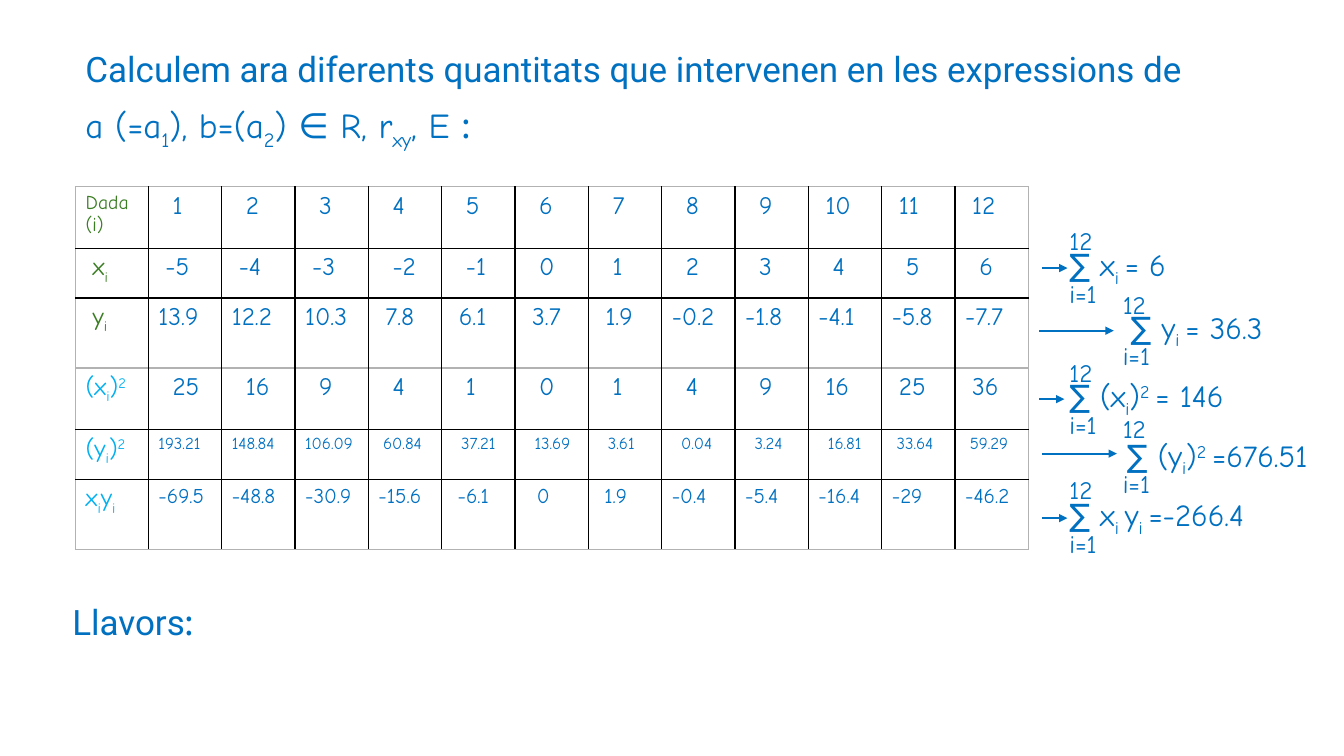
from lxml import etree
from pptx import Presentation
from pptx import util as u
from pptx.dml.color import RGBColor
from pptx.enum import shapes, text
from pptx.oxml import ns

COLORS = {"blue": "0070C0", "sky": "00B0F0", "green": "3B7D23", "grid": "000000", "frame": "B2B2B2"}
BASELINES = {"_": "-25000", "^": "30000"}
COLUMN_WIDTHS = [52] + [52.4] * 12
ROW_HEIGHTS = [44, 35.5, 50]
TABLE_LEFT, TABLE_TOP = 54, 133.3
SPACE_WIDTH = 0.28


def write_text(frame, content, size=18, font="Comic Neue", color="blue", line_spacing=None, space_before=None):
    for number, line in enumerate(content.split("\n")):
        paragraph = frame.paragraphs[0] if number == 0 else frame.add_paragraph()
        if line_spacing:
            paragraph.line_spacing = line_spacing
            paragraph.space_before = u.Pt(space_before)
        line_font = font
        if line.startswith("#"):
            line_font, line = "Roboto", line[1:]
        for part in line.split("|"):
            mark = part[0] if part[0] in "_^@" else ""
            run = paragraph.add_run()
            run.text = part[len(mark):]
            run.font.size = u.Pt(size)
            run.font.name = "Noto Sans CJK JP" if mark == "@" else line_font
            run.font.color.rgb = RGBColor.from_string(COLORS[color])
            if mark in BASELINES:
                run.font._element.set("baseline", BASELINES[mark])


class SlideBuilder:
    def __init__(self, slide):
        self.slide = slide

    def text_box(self, content, left, top, width, height, wrap=True, grow=False, **style):
        box = self.slide.shapes.add_textbox(u.Pt(left), u.Pt(top), u.Pt(width), u.Pt(height))
        frame = box.text_frame
        frame.word_wrap = wrap
        frame.auto_size = text.MSO_AUTO_SIZE.SHAPE_TO_FIT_TEXT if grow else text.MSO_AUTO_SIZE.NONE
        write_text(frame, content, **style)

    def arrow(self, left, y, length):
        line = self.slide.shapes.add_connector(
            shapes.MSO_CONNECTOR.STRAIGHT, u.Pt(left), u.Pt(y), u.Pt(left + length), u.Pt(y))
        line.line.color.rgb = RGBColor.from_string(COLORS["blue"])
        line.line.width = u.Pt(1.5)
        etree.SubElement(line.line._get_or_add_ln(), ns.qn("a:tailEnd"), type="triangle")
        etree.SubElement(line._element.spPr, ns.qn("a:effectLst"))

    def border(self, cell, edges):
        properties = cell._tc.get_or_add_tcPr()
        for index, (side, color) in enumerate(edges):
            line = etree.Element(ns.qn(f"a:ln{side}"), w=str(u.Pt(1)))
            fill = etree.SubElement(line, ns.qn("a:solidFill"))
            etree.SubElement(fill, ns.qn("a:srgbClr"), val=COLORS[color])
            properties.insert(index, line)

    def table(self, top, rows, label_color):
        graphic = self.slide.shapes.add_table(
            len(ROW_HEIGHTS), len(COLUMN_WIDTHS), u.Pt(TABLE_LEFT), u.Pt(top),
            u.Pt(sum(COLUMN_WIDTHS)), u.Pt(sum(ROW_HEIGHTS)))
        grid = graphic.table
        grid.first_row = grid.horz_banding = False
        for column, width in zip(grid.columns, COLUMN_WIDTHS):
            column.width = u.Pt(width)
        last_row, last_column = len(ROW_HEIGHTS) - 1, len(COLUMN_WIDTHS) - 1
        for r, (label, label_size, values, size, indents) in enumerate(rows):
            grid.rows[r].height = u.Pt(ROW_HEIGHTS[r])
            for c, content in enumerate([label] + values.split()):
                cell = grid.cell(r, c)
                cell.fill.background()
                self.border(cell, [
                    ("L", "frame" if c == 0 else "grid"),
                    ("R", "frame" if c == last_column else "grid"),
                    ("T", "frame" if r == 0 else "grid"),
                    ("B", "frame" if r == last_row else "grid")])
                text_size = size if c else label_size
                cell.margin_left = u.Pt(round(7.2 + int(indents[c]) * SPACE_WIDTH * text_size, 2))
                cell.margin_right = u.Pt(0)
                write_text(cell.text_frame, content, size=text_size,
                           color="blue" if c else label_color)

    def summation(self, term, left, limits_left, top, upper_top, arrow_left, arrow_y, arrow_length):
        self.text_box(f"∑ {term}", left, top, 165, 34, grow=True, size=22)
        self.text_box("i=1", limits_left, top + 23, 38, 29, wrap=False, grow=True)
        self.arrow(arrow_left, arrow_y, arrow_length)
        self.text_box("12", limits_left, upper_top, 34, 29, wrap=False, grow=True)


DATA_ROWS = [
    ("Dada\n(i)", 14, "1 2 3 4 5 6 7 8 9 10 11 12", 18, "0222222222111"),
    ("x|_i", 18, "-5 -4 -3 -2 -1 0 1 2 3 4 5 6", 18, "1111222222222"),
    ("y|_i", 18, "13.9 12.2 10.3 7.8 6.1 3.7 1.9 -0.2 -1.8 -4.1 -5.8 -7.7", 18, "1000111100000"),
]
PRODUCT_ROWS = [
    ("(x|_i|)|^2", 18, "25 16 9 4 1 0 1 4 9 16 25 36", 18, "0222222222111"),
    ("(y|_i|)|^2", 18,
     "193.21 148.84 106.09 60.84 37.21 13.69 3.61 0.04 3.24 16.81 33.64 59.29", 12, "0000122222211"),
    ("x|_i|y|_i", 18,
     "-69.5 -48.8 -30.9 -15.6 -6.1 0 1.9 -0.4 -5.4 -16.4 -29 -46.2", 15, "0000012100000"),
]
SUMMATIONS = [
    ("x|_i |= 6", 756.7, 756.7, 172, 157.7, 744.5, 191.5, 18),
    ("y|_i |= 36.3", 800.6, 794.9, 216.7, 203, 742.3, 236.2, 53.3),
    ("(x|_i|)|^2 |= 146", 756.7, 756.7, 265.7, 252, 742.3, 285.1, 18),
    ("(y|_i|)|^2 |=676.51", 797.8, 794.9, 308.2, 291.6, 744.5, 324, 53.3),
    ("x|_i |y|_i |=-266.4", 756.7, 756.7, 350.6, 335.5, 744.5, 370.1, 18),
]


def main():
    deck = Presentation()
    deck.slide_width, deck.slide_height = u.Pt(960), u.Pt(540)
    builder = SlideBuilder(deck.slides.add_slide(deck.slide_layouts[6]))
    builder.table(TABLE_TOP, DATA_ROWS, "green")
    builder.text_box(
        "#Calculem ara diferents quantitats que intervenen en les expressions de\n"
        "a (=a|_1|), b=(a|_2|) ∈ R, r|_xy|, E |@:",
        54, 33.8, 906, 94, size=25, line_spacing=0.9, space_before=10)
    builder.table(TABLE_TOP + sum(ROW_HEIGHTS), PRODUCT_ROWS, "sky")
    for summation in SUMMATIONS:
        builder.summation(*summation)
    builder.text_box("#Llavors|@:", 44.6, 431.3, 915, 64, size=25, line_spacing=0.8, space_before=10)
    deck.save("out.pptx")


if __name__ == "__main__":
    main()
